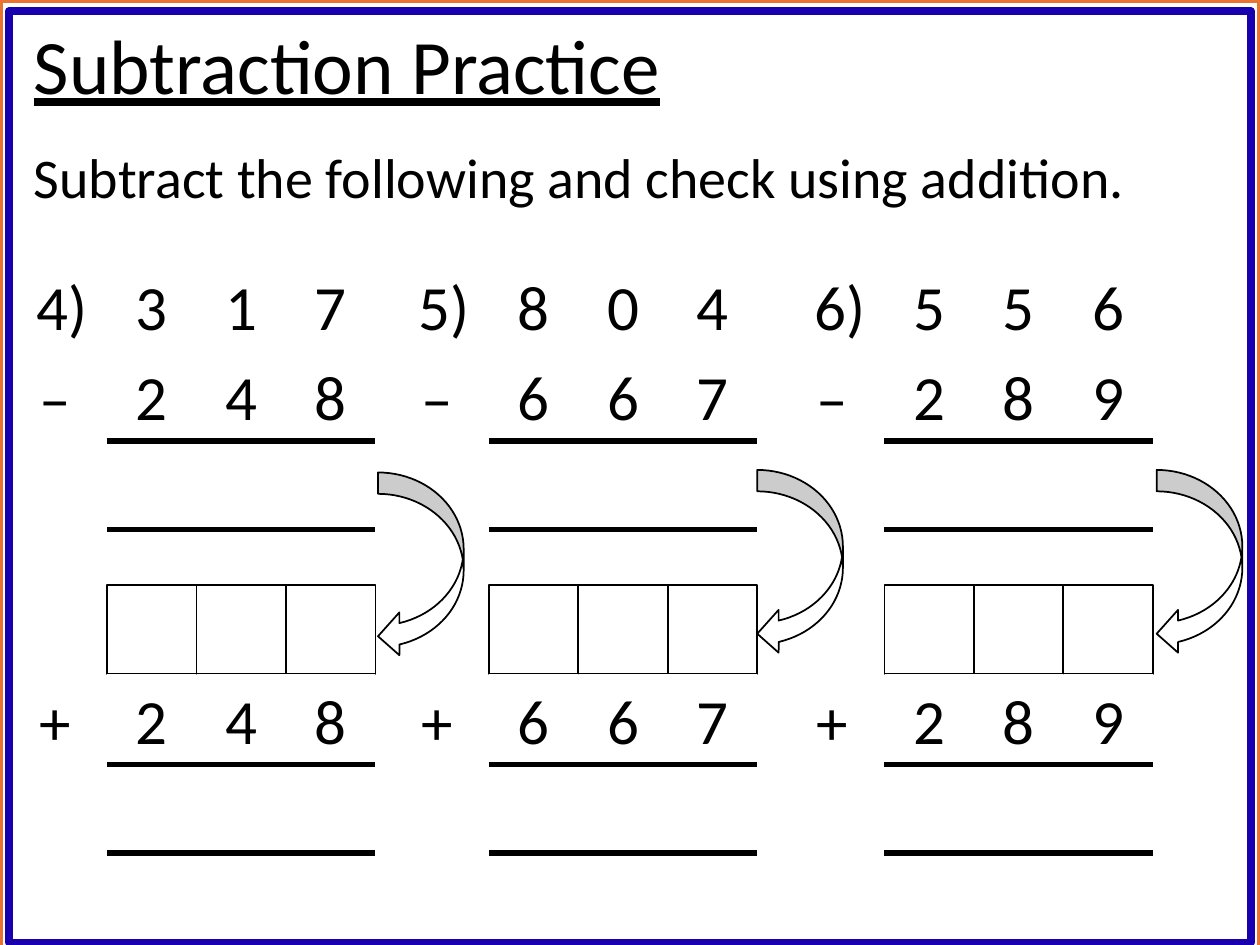
from lxml import etree
from pptx import Presentation, util as u
from pptx.dml.color import RGBColor
from pptx.enum import shapes, text
from pptx.oxml.ns import qn

TITLE = "Subtraction Practice"
TASK = "Subtract the following and check using addition."
PROBLEMS = [
    {"label": "4)", "top": "317", "taken": "248", "left": 0.14, "arrow": (3.0, 3.75)},
    {"label": "5)", "top": "804", "taken": "667", "left": 3.17, "arrow": (6.01, 3.73)},
    {"label": "6)", "top": "556", "taken": "289", "left": 6.31, "arrow": (9.18, 3.73)},
]
COLORS = {"ink": "000000", "paper": "FFFFFF", "outer": "EB7331", "inner": "1900AE"}
FONT = "Calibri"
CELL = 0.71
SUBTRACT_TOP, CHECK_TOP = 2.07, 4.64
FRAMES = [("outer", 3, (0, 0, 10, 7.57)), ("inner", 4.5, (0.07, 0.09, 9.86, 7.39))]


def color(name):
    return RGBColor.from_string(COLORS[name])


def write(sp, words, size, align=None, underline=None, spacing=None):
    tf = sp.text_frame
    tf.word_wrap = True
    tf.vertical_anchor = text.MSO_ANCHOR.MIDDLE
    p = tf.paragraphs[0]
    p.alignment = align
    p.line_spacing = spacing
    r = p.add_run()
    r.text = words
    r.font.name = FONT
    r.font.size = u.Pt(size)
    r.font.underline = underline
    r.font.color.rgb = color("ink")


def add_shape(parent, kind, box, fill="paper", line=None, width=1):
    sp = parent.shapes.add_shape(kind, *map(u.Inches, box))
    sp.shadow.inherit = False
    if fill:
        sp.fill.solid()
        sp.fill.fore_color.rgb = color(fill)
    else:
        sp.fill.background()
    if line:
        sp.line.color.rgb = color(line)
        sp.line.width = u.Pt(width)
    else:
        sp.line.fill.background()
    return sp


def add_cell(grp, x, y, words="", line=None):
    sp = add_shape(grp, shapes.MSO_SHAPE.RECTANGLE, (x, y, CELL, CELL), line=line)
    if words:
        write(sp, words, 36, align=text.PP_ALIGN.CENTER)


def add_rule(grp, x, y):
    cn = grp.shapes.add_connector(shapes.MSO_CONNECTOR.STRAIGHT,
                                  *map(u.Inches, (x, y, x + 3 * CELL, y)))
    cn.line.color.rgb = color("ink")
    cn.line.width = u.Pt(3)
    etree.SubElement(cn._element.spPr, qn("a:effectLst"))


def add_sum(s, left, top, sign, label, first, second, boxed=False):
    grp = s.shapes.add_group_shape()
    digits_left = left + CELL
    for row, digits in enumerate((first, second, "   ")):
        for col, digit in enumerate(digits):
            line = "ink" if boxed and row == 0 else None
            add_cell(grp, digits_left + col * CELL, top + row * CELL, digit.strip(), line)
    if label:
        add_cell(grp, left, top, label)
    add_cell(grp, left, top + CELL + 0.01, sign)
    for offset in (1.43, 2.13):
        add_rule(grp, digits_left, top + offset)


def add_text(s, box, words, size, **fmt):
    write(s.shapes.add_textbox(*map(u.Inches, box)), words, size, spacing=0.9, **fmt)


def main():
    prs = Presentation()
    prs.slide_width, prs.slide_height = u.Inches(10), u.Inches(7.5)
    s = prs.slides.add_slide(prs.slide_layouts[6])
    for name, width, box in FRAMES:
        add_shape(s, shapes.MSO_SHAPE.RECTANGLE, box, fill=None, line=name, width=width)
    add_text(s, (0.17, 0.17, 8.62, 0.76), TITLE, 44, underline=True)
    for q in PROBLEMS:
        add_sum(s, q["left"], SUBTRACT_TOP, "– ", q["label"], q["top"], q["taken"])
        add_sum(s, q["left"], CHECK_TOP, "+ ", "", "   ", q["taken"], boxed=True)
    add_text(s, (0.17, 1.05, 8.98, 0.76), TASK, 32)
    for q in PROBLEMS:
        add_shape(s, shapes.MSO_SHAPE.CURVED_LEFT_ARROW, (*q["arrow"], 0.68, 1.47), line="ink")
    prs.save("out.pptx")


if __name__ == "__main__":
    main()
